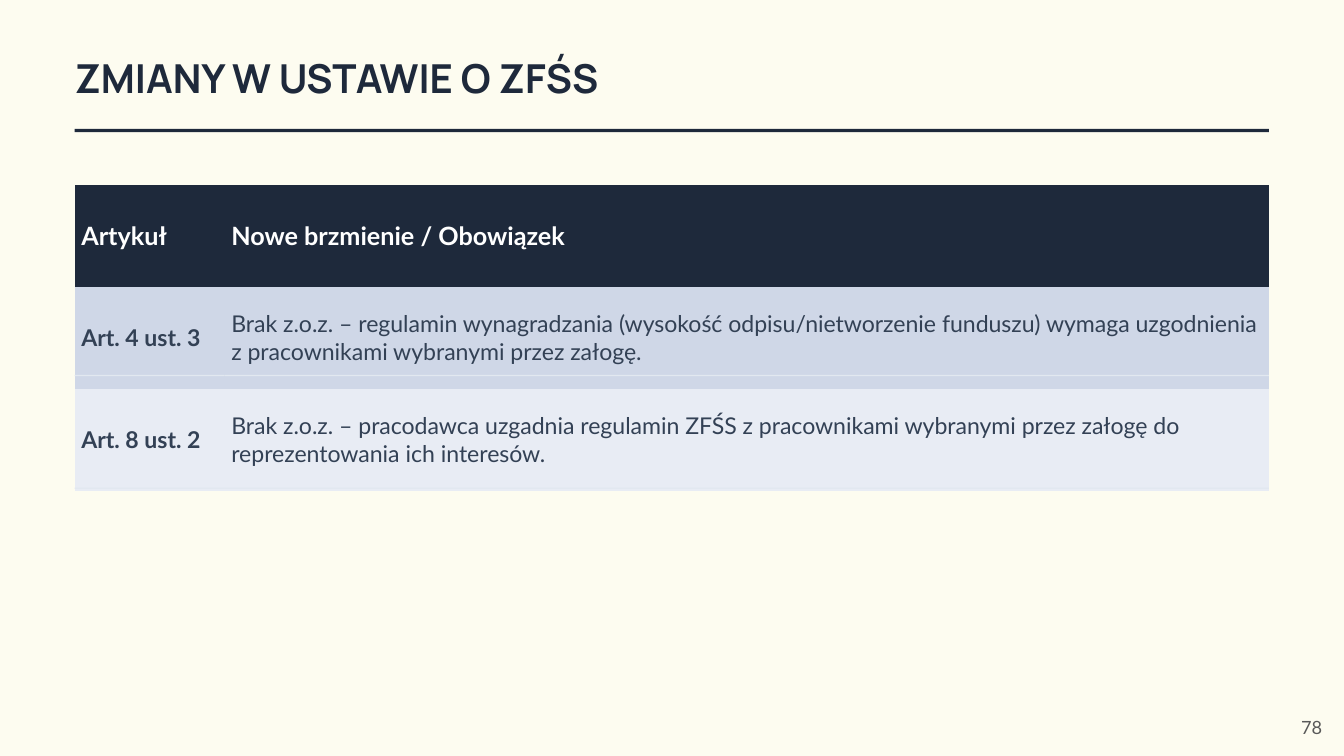
from pptx import Presentation
from pptx.dml.color import RGBColor
from pptx.enum.shapes import MSO_SHAPE
from pptx.enum.text import MSO_ANCHOR, MSO_AUTO_SIZE, PP_ALIGN
from pptx.util import Cm, Pt

CREAM = RGBColor(0xFD, 0xFC, 0xF0)
NAVY = RGBColor(0x1E, 0x29, 0x3B)
SLATE = RGBColor(0x33, 0x41, 0x55)
WHITE = RGBColor(0xFF, 0xFF, 0xFF)
GREY = RGBColor(0x59, 0x59, 0x59)
MIST = RGBColor(0xE2, 0xE8, 0xF0)
BANDS = [RGBColor(0xCF, 0xD7, 0xE7), RGBColor(0xE8, 0xEC, 0xF4)]
PLAIN = "{2D5ABB26-0587-4C30-8999-92F81FD0307C}"  # table style without grid

LEFT = 1.88
COLS = [3.78, 26.32]
ROW = 2.57
ROWS = [
    ("Artykuł", "Nowe brzmienie / Obowiązek"),
    ("Art. 4 ust. 3",
     "Brak z.o.z. – regulamin wynagradzania (wysokość odpisu/nietworzenie "
     "funduszu) wymaga uzgodnienia z pracownikami wybranymi przez załogę."),
    ("Art. 8 ust. 2",
     "Brak z.o.z. – pracodawca uzgadnia regulamin ZFŚS z pracownikami "
     "wybranymi przez załogę do reprezentowania ich interesów."),
]


class Deck:
    def __init__(self):
        self.show = Presentation()
        self.show.slide_width, self.show.slide_height = Cm(33.87), Cm(19.05)
        self.slide = self.show.slides.add_slide(self.show.slide_layouts[5])
        fill = self.slide.background.fill
        fill.solid()
        fill.fore_color.rgb = CREAM

    def add_text(self, frame, text, size, color, bold=False, font="Lato",
                 align=PP_ALIGN.LEFT):
        para = frame.paragraphs[0]
        para.alignment = align
        run = para.add_run()
        run.text = text
        run.font.name, run.font.size = font, Pt(size)
        run.font.bold, run.font.color.rgb = bold, color

    def pad(self, box, wide, high):
        box.margin_left = box.margin_right = Cm(wide)
        box.margin_top = box.margin_bottom = Cm(high)

    def title(self, text, x, y, w, h):
        box = self.slide.shapes.title
        box.left, box.top, box.width, box.height = Cm(x), Cm(y), Cm(w), Cm(h)
        frame = box.text_frame
        frame.vertical_anchor = MSO_ANCHOR.TOP
        frame.auto_size = MSO_AUTO_SIZE.SHAPE_TO_FIT_TEXT
        self.pad(frame, 0, 0)
        self.add_text(frame, text, 28.5, NAVY, True, "Manrope")

    def bar(self, x, y, w, h, color):
        bar = self.slide.shapes.add_shape(
            MSO_SHAPE.RECTANGLE, Cm(x), Cm(y), Cm(w), Cm(h))
        bar.shadow.inherit = False
        bar.fill.solid()
        bar.fill.fore_color.rgb = color
        bar.line.fill.background()

    def table(self, rows, x, y):
        table = self.slide.shapes.add_table(
            len(rows), len(COLS), Cm(x), Cm(y),
            Cm(sum(COLS)), Cm(ROW * len(rows))).table
        table._tbl.tblPr.find("{*}tableStyleId").text = PLAIN
        for col, width in zip(table.columns, COLS):
            col.width = Cm(width)
        for i, texts in enumerate(rows):
            table.rows[i].height = Cm(ROW)
            head = i == 0
            for j, text in enumerate(texts):
                cell = table.cell(i, j)
                cell.fill.solid()
                cell.fill.fore_color.rgb = NAVY if head else BANDS[i - 1]
                cell.vertical_anchor = MSO_ANCHOR.MIDDLE
                self.pad(cell, 0.17, 0.08)
                self.add_text(cell.text_frame, text, 18 if head else 16.5,
                              WHITE if head else SLATE, head or j == 0)

    def number(self, text, x, y, w, h):
        box = self.slide.shapes.add_textbox(Cm(x), Cm(y), Cm(w), Cm(h))
        frame = box.text_frame
        frame.word_wrap = True
        frame.vertical_anchor = MSO_ANCHOR.MIDDLE
        self.pad(frame, 0.33, 0.33)
        self.add_text(frame, text, 13, GREY, align=PP_ALIGN.RIGHT)


def main():
    deck = Deck()

    # Title and rule
    deck.title("ZMIANY W USTAWIE O ZFŚS", LEFT, 1.35, 31.62, 1.22)
    deck.bar(LEFT, 3.25, sum(COLS), 0.08, NAVY)

    # Table of articles
    deck.table(ROWS, LEFT, 4.65)

    # Thin lines under each column
    for y in (9.45, 12.29):
        for j, width in enumerate(COLS):
            deck.bar(LEFT + sum(COLS[:j]), y, width, 0.03, MIST)

    # Page number
    deck.number("78", 31.62, 17.6, 2.03, 1.45)
    deck.show.save("out.pptx")


if __name__ == "__main__":
    main()
